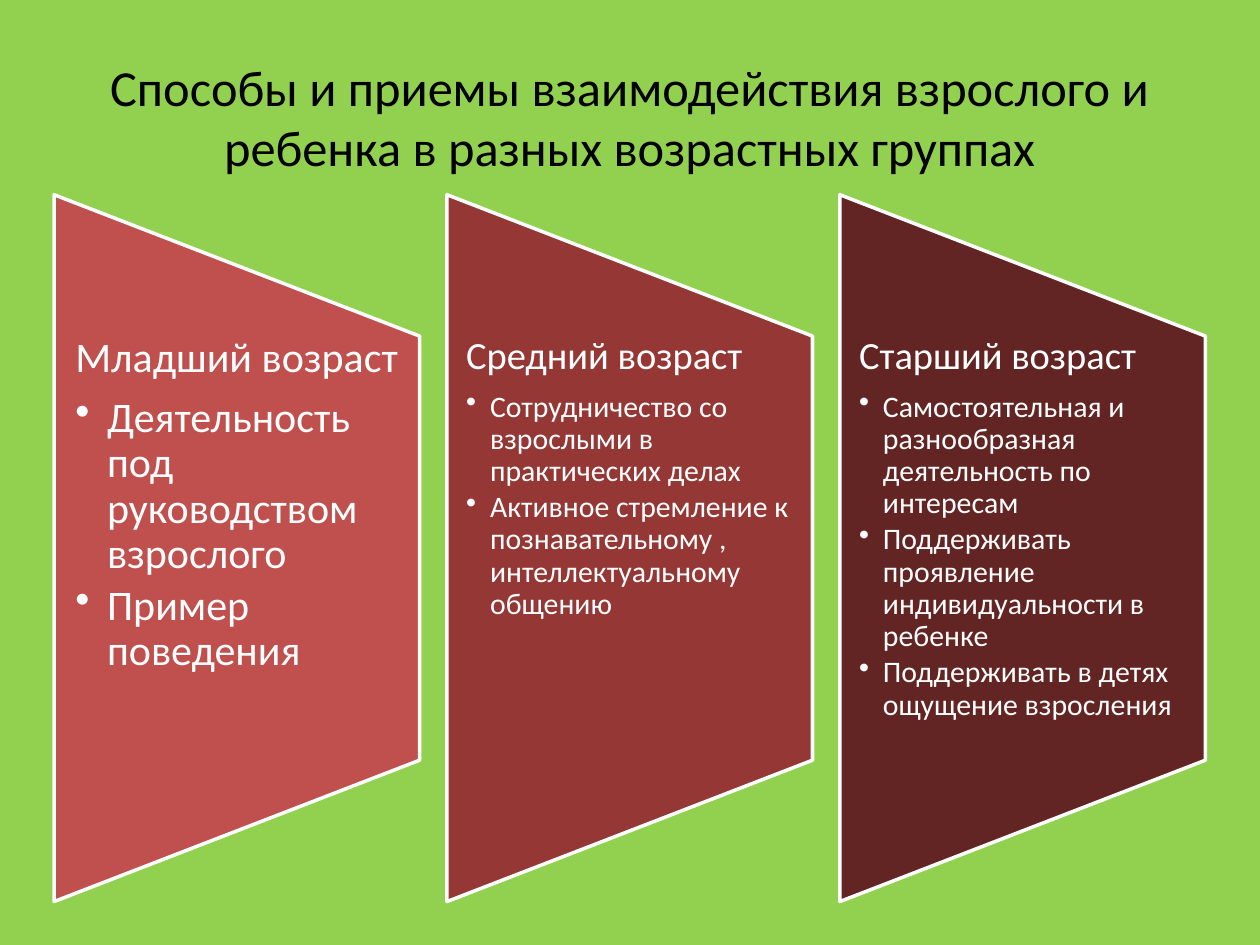
from dataclasses import dataclass

import lxml.etree
import pptx
import pptx.dml.color
import pptx.enum.shapes
import pptx.enum.text
import pptx.oxml.ns
import pptx.util

Cm, Pt = pptx.util.Cm, pptx.util.Pt
ALIGN = pptx.enum.text.PP_ALIGN
ANCHOR = pptx.enum.text.MSO_ANCHOR

COLORS = {
    "background": "92D050",
    "title": "000000",
    "white": "FFFFFF",
    "younger": "C0504D",
    "middle": "953735",
    "older": "632523",
}
FONT = "Calibri"

# Panel geometry in centimetres
PANEL_LEFT, PANEL_PITCH = 1.09, 7.92
PANEL_WIDTH, PANEL_HEIGHT = 7.37, 14.25
PANEL_MIDDLE = 11.05
TEXT_TOP, TEXT_HEIGHT = 6.78, 8.56


@dataclass
class AgeGroup:
    heading: str
    methods: list[str]
    color: str
    heading_size: float = 22
    method_size: float = 17
    indent: float = 0.48
    inset: float = 0.39


AGE_GROUPS = [
    AgeGroup(
        "Младший возраст",
        ["Деятельность под руководством взрослого", "Пример поведения"],
        "younger", heading_size=24, method_size=24, indent=0.64, inset=0.43,
    ),
    AgeGroup(
        "Средний возраст",
        [
            "Сотрудничество со взрослыми в практических делах",
            "Активное стремление к познавательному , интеллектуальному общению",
        ],
        "middle",
    ),
    AgeGroup(
        "Старший возраст",
        [
            "Самостоятельная и разнообразная деятельность по интересам",
            "Поддерживать проявление индивидуальности в ребенке",
            "Поддерживать в детях ощущение взросления",
        ],
        "older",
    ),
]


def rgb(name: str) -> pptx.dml.color.RGBColor:
    return pptx.dml.color.RGBColor.from_string(COLORS[name])


def add_text_box(s, left: float, top: float, width: float, height: float,
                 anchor=ANCHOR.TOP):
    """Add a wrapping text box, measured in centimetres; return its text frame."""
    sp = s.shapes.add_textbox(Cm(left), Cm(top), Cm(width), Cm(height))
    tf = sp.text_frame
    tf.word_wrap = True
    tf.vertical_anchor = anchor
    return tf


def write(tf, text: str, *, size: float, color: str = "white", align=ALIGN.LEFT,
          line_spacing: float = 1.0, space_after: float = 0,
          bullet_indent: float = 0) -> None:
    """Write one paragraph; space_after is a share of the text size."""
    p = tf.paragraphs[0]
    if p.runs:
        p = tf.add_paragraph()
    p.alignment = align
    p.line_spacing = line_spacing
    p.space_after = Pt(round(size * space_after, 1))
    r = p.add_run()
    r.text = text
    r.font.name = FONT
    r.font.size = Pt(size)
    r.font.color.rgb = rgb(color)
    if bullet_indent:
        p.level = 1
        pPr = p._p.get_or_add_pPr()
        pPr.set("marL", str(Cm(bullet_indent)))
        pPr.set("indent", str(-Cm(bullet_indent)))
        bullet = lxml.etree.SubElement(pPr, pptx.oxml.ns.qn("a:buChar"))
        bullet.set("char", "•")


def add_panel(s, group: AgeGroup, left: float) -> None:
    """Draw the trapezoid, turned a quarter left, and its list of methods."""
    sp = s.shapes.add_shape(
        pptx.enum.shapes.MSO_SHAPE.FLOWCHART_MANUAL_OPERATION,
        Cm(left + (PANEL_WIDTH - PANEL_HEIGHT) / 2),
        Cm(PANEL_MIDDLE - PANEL_WIDTH / 2),
        Cm(PANEL_HEIGHT), Cm(PANEL_WIDTH),
    )
    sp.rotation = 270
    sp.shadow.inherit = False
    sp.fill.solid()
    sp.fill.fore_color.rgb = rgb(group.color)
    sp.line.color.rgb = rgb("white")
    sp.line.width = Pt(2)

    tf = add_text_box(s, left, TEXT_TOP, PANEL_WIDTH, TEXT_HEIGHT)
    tf.margin_left = tf.margin_right = Cm(group.inset)
    tf.margin_top = tf.margin_bottom = 0
    write(tf, group.heading, size=group.heading_size,
          line_spacing=0.9, space_after=0.35)
    for method in group.methods:
        write(tf, method, size=group.method_size, line_spacing=0.9,
              space_after=0.15, bullet_indent=group.indent)


def main() -> None:
    prs = pptx.Presentation()
    prs.slide_width, prs.slide_height = Cm(25.4), Cm(19.05)
    s = prs.slides.add_slide(prs.slide_layouts[6])
    s.background.fill.solid()
    s.background.fill.fore_color.rgb = rgb("background")

    title = add_text_box(s, 1.27, 0.76, 22.86, 3.18, anchor=ANCHOR.MIDDLE)
    write(title,
          "Способы и приемы взаимодействия взрослого и ребенка "
          "в разных возрастных группах",
          size=28.8, color="title", align=ALIGN.CENTER)

    for i, group in enumerate(AGE_GROUPS):
        add_panel(s, group, PANEL_LEFT + i * PANEL_PITCH)
    prs.save("out.pptx")


if __name__ == "__main__":
    main()
